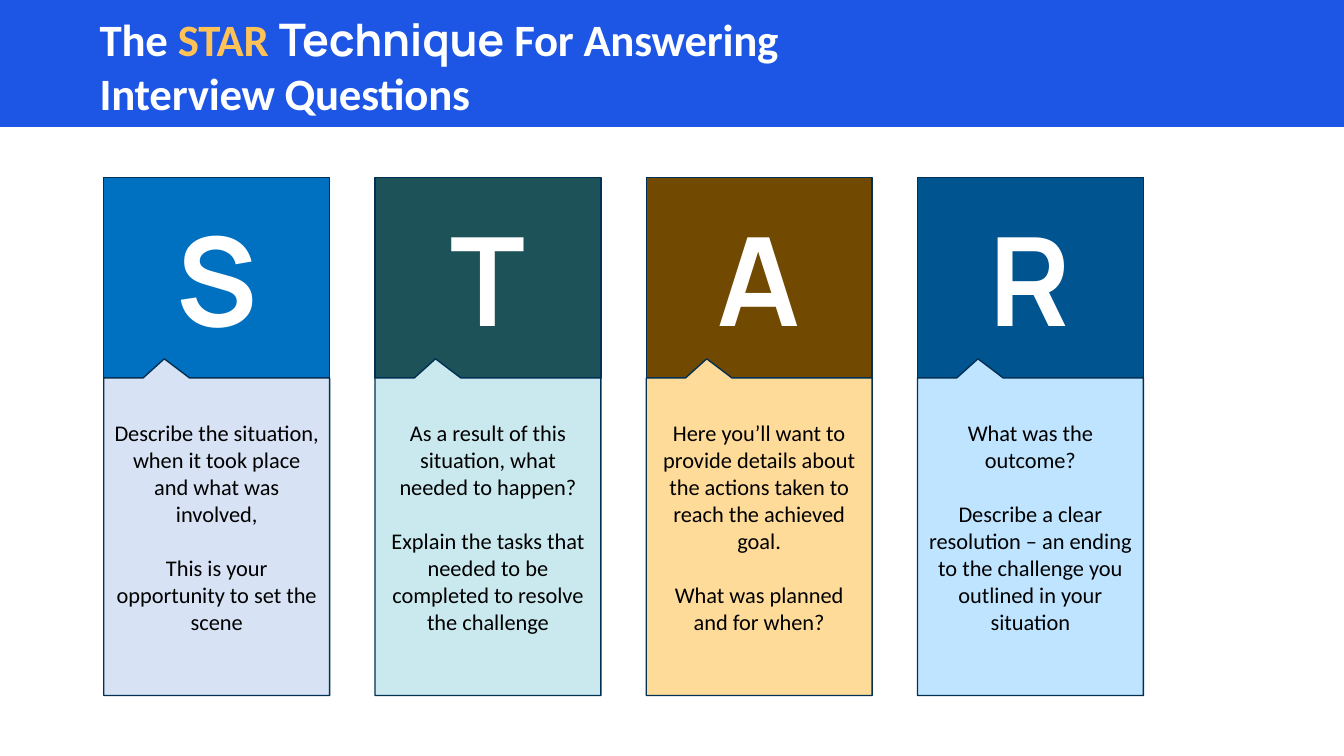
from dataclasses import dataclass

import pptx
import pptx.dml.color
import pptx.enum.shapes
import pptx.enum.text
import pptx.util

Inches = pptx.util.Inches
Pt = pptx.util.Pt

COLUMN_LEFT, COLUMN_PITCH, COLUMN_WIDTH = 1.03, 2.69, 2.24
LETTER_TOP, LETTER_HEIGHT = 1.76, 1.99
NOTE_TOP, NOTE_BOTTOM, POINTER_HEIGHT = 3.75, 6.9, 0.19
POINTER_START, POINTER_TIP, POINTER_END = 0.39, 0.6, 0.85
OUTLINE = "003154"
WHITE = "FFFFFF"


@dataclass
class Step:
    letter: str
    dark: str
    light: str
    notes: tuple[str, str]


@dataclass
class Span:
    text: str
    typeface: str
    hue: str


STEPS = [
    Step("S", "0070C0", "D7E2F5", (
        "Describe the situation, when it took place and what was involved,",
        "This is your opportunity to set the scene")),
    Step("T", "1D5259", "CAE9EE", (
        "As a result of this situation, what needed to happen?",
        "Explain the tasks that needed to be completed to resolve the challenge")),
    Step("A", "724900", "FFDB9A", (
        "Here you’ll want to provide details about the actions taken to reach the achieved goal.",
        "What was planned and for when?")),
    Step("R", "005490", "BFE4FF", (
        "What was the outcome?",
        "Describe a clear resolution – an ending to the challenge you outlined in your situation")),
]

TITLE = [
    Span("The ", "Calibri", WHITE),
    Span("STAR ", "Calibri", "FFC256"),
    Span("Technique", "Manrope", WHITE),
    Span(" For Answering Interview Questions", "Calibri", WHITE),
]


def color(value: str) -> pptx.dml.color.RGBColor:
    return pptx.dml.color.RGBColor.from_string(value)


def paint(shape, fill: str, outline: str | None = None) -> None:
    shape.shadow.inherit = False
    shape.fill.solid()
    shape.fill.fore_color.rgb = color(fill)
    if outline is None:
        shape.line.fill.background()
    else:
        shape.line.color.rgb = color(outline)
        shape.line.width = Pt(1)


def add_rectangle(page, left: float, top: float, width: float, height: float):
    return page.shapes.add_shape(
        pptx.enum.shapes.MSO_SHAPE.RECTANGLE,
        Inches(left), Inches(top), Inches(width), Inches(height))


def write_centred(shape, texts: tuple[str, ...], typeface: str, size: float,
                  hue: str, bold: bool = False) -> None:
    frame = shape.text_frame
    frame.word_wrap = True
    frame.vertical_anchor = pptx.enum.text.MSO_ANCHOR.MIDDLE
    for index, text in enumerate(texts):
        para = frame.add_paragraph() if index else frame.paragraphs[0]
        para.text = text
        para.alignment = pptx.enum.text.PP_ALIGN.CENTER
        if index:
            para.space_before = Pt(19.5)
        para.font.name = typeface
        para.font.size = Pt(size)
        para.font.bold = bold
        para.font.color.rgb = color(hue)


def add_title(page) -> None:
    paint(add_rectangle(page, 0, 0, 13.33, 1.26), "1D55E5")
    box = page.shapes.add_textbox(Inches(0.89), Inches(0.21), Inches(8.75), Inches(0.88))
    frame = box.text_frame
    frame.word_wrap = True
    frame.vertical_anchor = pptx.enum.text.MSO_ANCHOR.MIDDLE
    para = frame.paragraphs[0]
    para.font.size = Pt(32)
    para.font.bold = True
    for span in TITLE:
        run = para.add_run()
        run.text = span.text
        run.font.name = span.typeface
        run.font.color.rgb = color(span.hue)
        run._r.get_or_add_rPr().set("spc", "-20")


def add_letter(page, step: Step, left: float) -> None:
    tile = add_rectangle(page, left, LETTER_TOP, COLUMN_WIDTH, LETTER_HEIGHT)
    paint(tile, step.dark, OUTLINE)
    write_centred(tile, (step.letter,), "Manrope", 88, WHITE, bold=True)


def add_note(page, step: Step, left: float) -> None:
    """Draw the panel whose top edge points up into the letter tile."""
    right = left + COLUMN_WIDTH
    corners = [
        (left + POINTER_START, NOTE_TOP),
        (left + POINTER_TIP, NOTE_TOP - POINTER_HEIGHT),
        (left + POINTER_END, NOTE_TOP),
        (right, NOTE_TOP),
        (right, NOTE_BOTTOM),
        (left, NOTE_BOTTOM),
    ]
    builder = page.shapes.build_freeform(Inches(left), Inches(NOTE_TOP))
    builder.add_line_segments([(Inches(x), Inches(y)) for x, y in corners], close=True)
    panel = builder.convert_to_shape()
    paint(panel, step.light, OUTLINE)
    write_centred(panel, step.notes, "Calibri", 16, "000000")


def main() -> None:
    deck = pptx.Presentation()
    deck.slide_width, deck.slide_height = Inches(13.33), Inches(7.5)
    page = deck.slides.add_slide(deck.slide_layouts[6])
    add_title(page)
    for index, step in enumerate(STEPS):
        left = COLUMN_LEFT + index * COLUMN_PITCH
        add_letter(page, step, left)
        add_note(page, step, left)
    deck.save("out.pptx")


if __name__ == "__main__":
    main()
